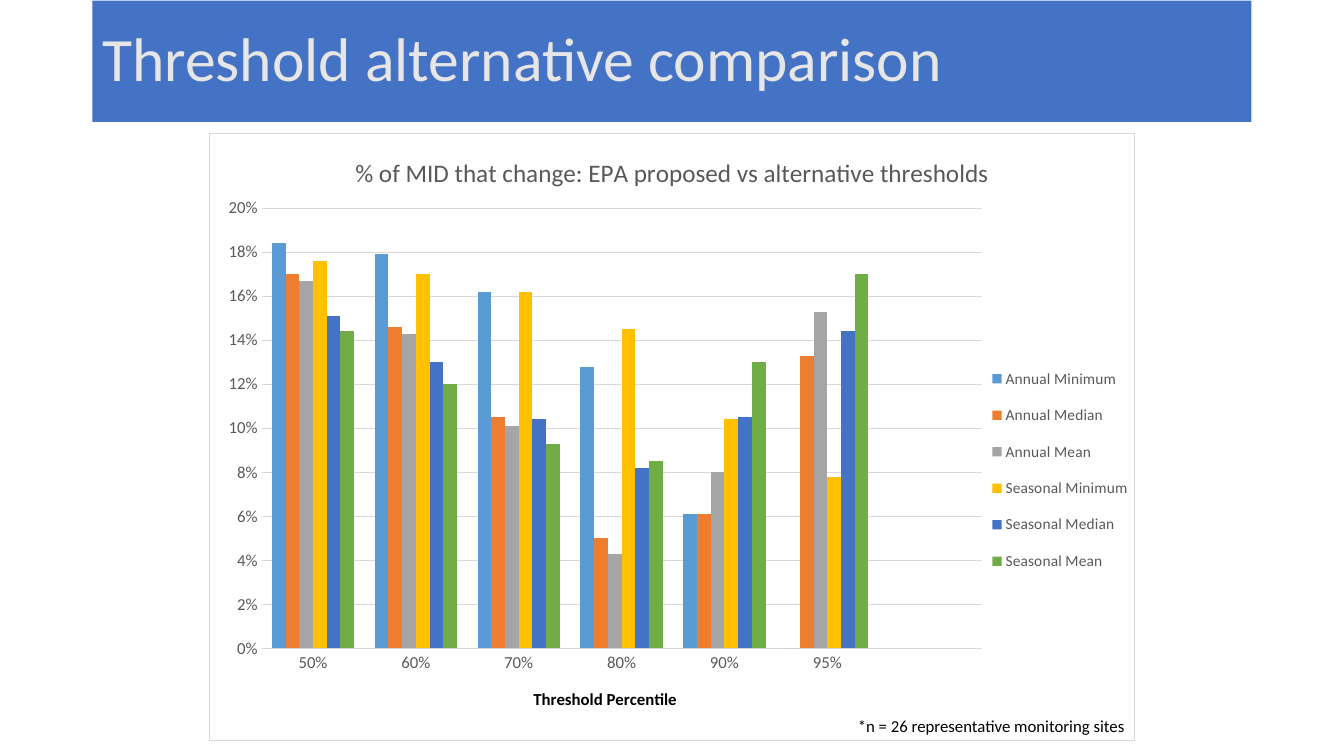
from lxml import etree
from pptx import Presentation, util as u
from pptx.chart.data import CategoryChartData
from pptx.dml.color import RGBColor
from pptx.enum import chart as charts, shapes, text
from pptx.oxml import parse_xml
from pptx.oxml.ns import nsdecls, qn

BLACK = RGBColor(0x00, 0x00, 0x00)
WHITE = RGBColor(0xFF, 0xFF, 0xFF)
LIGHT = RGBColor(0xE7, 0xE6, 0xE6)
RULE = RGBColor(0xD9, 0xD9, 0xD9)
GREY = RGBColor(0x59, 0x59, 0x59)
SKY = RGBColor(0x5B, 0x9B, 0xD5)
ORANGE = RGBColor(0xED, 0x7D, 0x31)
SILVER = RGBColor(0xA5, 0xA5, 0xA5)
GOLD = RGBColor(0xFF, 0xC0, 0x00)
BLUE = RGBColor(0x44, 0x72, 0xC4)
GREEN = RGBColor(0x70, 0xAD, 0x47)

# The last, unnamed category leaves a free slot at the right.
PERCENTILES = ["50%", "60%", "70%", "80%", "90%", "95%", ""]
SERIES = [
    ("Annual Minimum", SKY, [0.184, 0.179, 0.162, 0.128, 0.061, 0]),
    ("Annual Median", ORANGE, [0.17, 0.146, 0.105, 0.05, 0.061, 0.133]),
    ("Annual Mean", SILVER, [0.167, 0.143, 0.101, 0.043, 0.08, 0.153]),
    ("Seasonal Minimum", GOLD, [0.176, 0.17, 0.162, 0.145, 0.104, 0.078]),
    ("Seasonal Median", BLUE, [0.151, 0.13, 0.104, 0.082, 0.105, 0.144]),
    ("Seasonal Mean", GREEN, [0.144, 0.12, 0.093, 0.085, 0.13, 0.17]),
]


class SlideBuilder:
    font_name = "Calibri"

    def __init__(self, slide):
        self.slide = slide

    def style_font(self, font, size, color, bold=False):
        font.name = self.font_name
        font.size = u.Pt(size)
        font.color.rgb = color
        font.bold = bold

    def set_text(self, frame, wording, size, color, bold=False):
        paragraph = frame.paragraphs[0]
        paragraph.text = wording
        self.style_font(paragraph.font, size, color, bold)
        return paragraph

    def banner(self, wording, *box):
        shape = self.slide.shapes.add_shape(
            shapes.MSO_SHAPE.RECTANGLE, *map(u.Pt, box))
        shape.shadow.inherit = False
        shape.fill.solid()
        shape.fill.fore_color.rgb = BLUE
        shape.line.fill.background()
        shape.text_frame.vertical_anchor = text.MSO_ANCHOR.MIDDLE
        paragraph = self.set_text(shape.text_frame, wording, 44, LIGHT)
        paragraph.alignment = text.PP_ALIGN.LEFT
        paragraph.line_spacing = 0.9

    def note(self, wording, *box):
        shape = self.slide.shapes.add_textbox(*map(u.Pt, box))
        shape.text_frame.word_wrap = True
        paragraph = self.set_text(shape.text_frame, wording, 12, BLACK)
        paragraph.alignment = text.PP_ALIGN.RIGHT

    def column_chart(self, title, axis_title, *box):
        data = CategoryChartData(number_format="0%")
        data.categories = PERCENTILES
        for name, _, values in SERIES:
            data.add_series(name, values + [None])
        chart = self.slide.shapes.add_chart(
            charts.XL_CHART_TYPE.COLUMN_CLUSTERED, *map(u.Pt, box), data).chart
        self.style_font(chart.font, 10, BLACK)
        chart.has_title = True
        self.set_text(chart.chart_title.text_frame, title, 18, GREY)
        chart.chart_title.include_in_layout = False

        plot = chart.plots[0]
        plot.gap_width = 150
        plot.overlap = 0
        plot.vary_by_categories = False
        for series, (_, color, _) in zip(plot.series, SERIES):
            series.format.fill.solid()
            series.format.fill.fore_color.rgb = color

        self.style_axes(chart, axis_title)
        chart.has_legend = True
        chart.legend.position = charts.XL_LEGEND_POSITION.RIGHT
        chart.legend.include_in_layout = False
        self.style_font(chart.legend.font, 11, GREY)

        frame = chart.element.find(qn("c:chart"))
        self.place(frame.find(qn("c:plotArea")), 0, 0.056, 0.123, 0.779, 0.726, True)
        self.place(frame.find(qn("c:legend")), 1, 0.84, 0.36, 0.16, 0.39)
        frame.addnext(parse_xml(
            f'<c:spPr {nsdecls("c", "a")}>'
            f'<a:solidFill><a:srgbClr val="{WHITE}"/></a:solidFill>'
            f'<a:ln w="{u.Pt(0.75)}"><a:solidFill><a:srgbClr val="{RULE}"/>'
            '</a:solidFill></a:ln></c:spPr>'))

    def style_axes(self, chart, axis_title):
        for axis in (chart.category_axis, chart.value_axis):
            axis.major_tick_mark = charts.XL_TICK_MARK.NONE
            axis.minor_tick_mark = charts.XL_TICK_MARK.NONE
            self.style_font(axis.tick_labels.font, 12, GREY)
        category, value = chart.category_axis, chart.value_axis
        category.has_title = True
        self.set_text(category.axis_title.text_frame, axis_title, 12, BLACK, True)
        value.minimum_scale, value.maximum_scale, value.major_unit = 0, 0.2, 0.02
        value.tick_labels.number_format = "0%"
        value.tick_labels.number_format_is_linked = False
        value.format.line.fill.background()
        value.has_major_gridlines = True
        for line in (category.format.line, value.major_gridlines.format.line):
            line.color.rgb = RULE
            line.width = u.Pt(0.75)

    def place(self, parent, index, x, y, w, h, inner=False):
        """Give a chart part a fixed place, as fractions of the chart."""
        for old in parent.findall(qn("c:layout")):
            parent.remove(old)
        layout = etree.Element(qn("c:layout"))
        manual = etree.SubElement(layout, qn("c:manualLayout"))
        settings = [("layoutTarget", "inner")] if inner else []
        settings += [("xMode", "edge"), ("yMode", "edge"),
                     ("x", x), ("y", y), ("w", w), ("h", h)]
        for tag, setting in settings:
            etree.SubElement(manual, qn(f"c:{tag}"), val=str(setting))
        parent.insert(index, layout)


def main():
    presentation = Presentation()
    presentation.slide_width, presentation.slide_height = u.Pt(960), u.Pt(540)
    slide = presentation.slides.add_slide(presentation.slide_layouts[6])
    builder = SlideBuilder(slide)
    builder.banner("Threshold alternative comparison", 66, 0.5, 828, 86.5)
    builder.column_chart(
        "% of MID that change: EPA proposed vs alternative thresholds",
        "Threshold Percentile", 149.5, 95, 661, 434)
    builder.note("*n = 26 representative monitoring sites", 603, 507.5, 207.5, 21.8)
    presentation.save("out.pptx")


if __name__ == "__main__":
    main()
